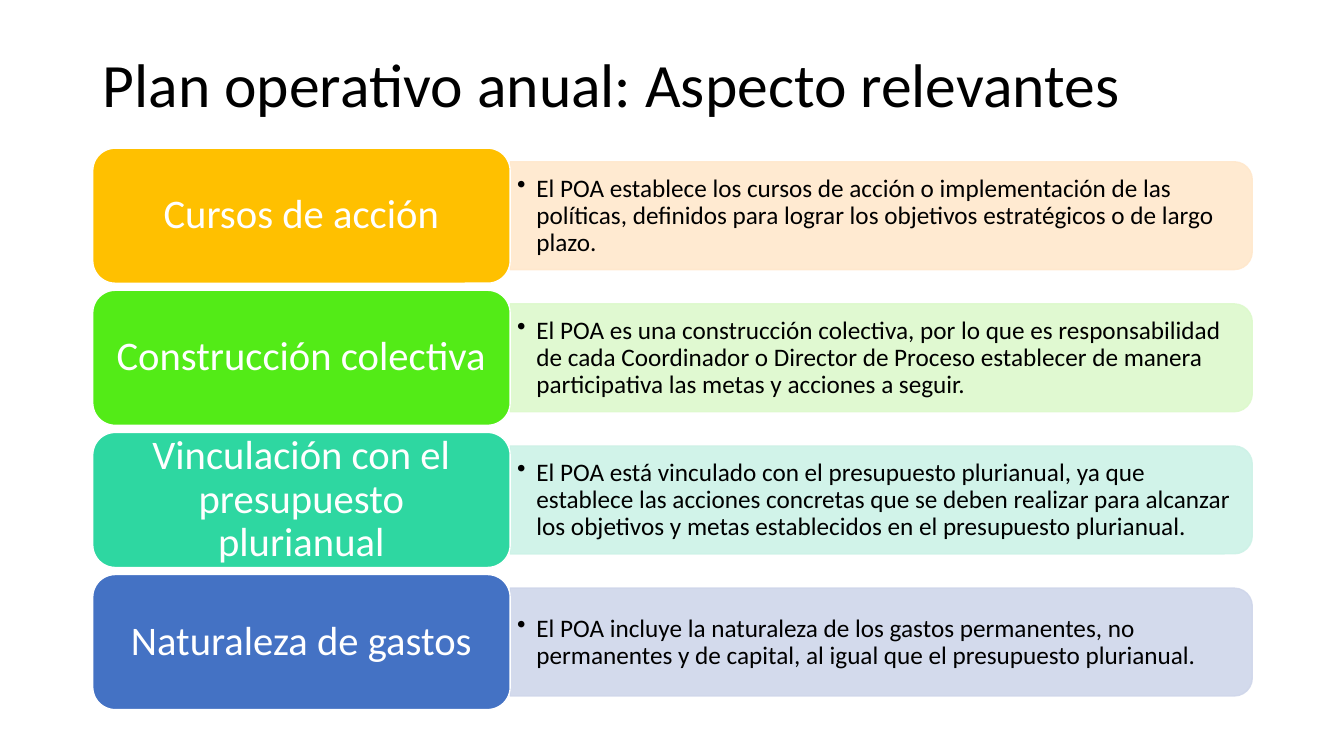
"""Build the slide on the relevant aspects of the annual operating plan."""
import lxml.etree
import pptx
import pptx.dml.color
import pptx.enum.shapes
import pptx.enum.text
import pptx.oxml.ns
import pptx.util

Inches = pptx.util.Inches
SHAPES = pptx.enum.shapes.MSO_SHAPE
ALIGN = pptx.enum.text.PP_ALIGN
qn = pptx.oxml.ns.qn


def color(hex_value):
    return pptx.dml.color.RGBColor.from_string(hex_value)


def write(shape, text, size, hex_value, alignment, margins, bullet=False):
    frame = shape.text_frame
    frame.text = text
    frame_format = {
        "word_wrap": True,
        "auto_size": pptx.enum.text.MSO_AUTO_SIZE.NONE,
        "vertical_anchor": pptx.enum.text.MSO_ANCHOR.MIDDLE,
        "margin_left": Inches(margins[0]),
        "margin_right": Inches(margins[0]),
        "margin_top": Inches(margins[1]),
        "margin_bottom": Inches(margins[1]),
    }
    for name, value in frame_format.items():
        setattr(frame, name, value)
    paragraph = frame.paragraphs[0]
    paragraph.alignment = alignment
    paragraph.line_spacing = 0.9
    if bullet:
        properties = paragraph._p.get_or_add_pPr()
        properties.set("marL", str(Inches(0.19)))
        properties.set("indent", str(Inches(-0.19)))
        lxml.etree.SubElement(properties, qn("a:buChar")).set("char", "•")
    font_format = {"name": "Calibri", "size": pptx.util.Pt(size)}
    for name, value in font_format.items():
        setattr(paragraph.font, name, value)
    paragraph.font.color.rgb = color(hex_value)


presentation = pptx.Presentation()
presentation.slide_width = Inches(13.33)
presentation.slide_height = Inches(7.5)
slide = presentation.slides.add_slide(presentation.slide_layouts[5])

title = slide.shapes.title
title_place = {"left": 0.92, "top": 0.4, "width": 11.5, "height": 0.94}
for name, value in title_place.items():
    setattr(title, name, Inches(value))
write(title, "Plan operativo anual: Aspecto relevantes", 44, "000000",
      ALIGN.LEFT, (0.1, 0.05))

aspects = [
    ("Cursos de acción", "FFC000", "FFE8CC",
     "El POA establece los cursos de acción o implementación de las políticas, "
     "definidos para lograr los objetivos estratégicos o de largo plazo."),
    ("Construcción colectiva", "53EB17", "DDF9CC",
     "El POA es una construcción colectiva, por lo que es responsabilidad de "
     "cada Coordinador o Director de Proceso establecer de manera participativa "
     "las metas y acciones a seguir."),
    ("Vinculación con el presupuesto plurianual", "2ED7A1", "CDF2E7",
     "El POA está vinculado con el presupuesto plurianual, ya que establece las "
     "acciones concretas que se deben realizar para alcanzar los objetivos y "
     "metas establecidos en el presupuesto plurianual."),
    ("Naturaleza de gastos", "4472C4", "CFD6EA",
     "El POA incluye la naturaleza de los gastos permanentes, no permanentes y "
     "de capital, al igual que el presupuesto plurianual."),
]
label_left, label_width, label_height = 0.92, 4.14, 1.34
panel_left, panel_width, panel_height = label_left + label_width, 7.36, 1.07
row_pitch = 1.41

for row, (heading, label_color, panel_color, description) in enumerate(aspects):
    top = 1.47 + row * row_pitch
    middle = top + label_height / 2

    panel = slide.shapes.add_shape(
        SHAPES.ROUND_2_SAME_RECTANGLE,
        Inches(panel_left + (panel_width - panel_height) / 2),
        Inches(middle - panel_width / 2),
        Inches(panel_height), Inches(panel_width))
    panel.rotation = 90
    label = slide.shapes.add_shape(
        SHAPES.ROUNDED_RECTANGLE, Inches(label_left), Inches(top),
        Inches(label_width), Inches(label_height))
    for shape, fill, line in ((panel, panel_color, panel_color),
                              (label, label_color, "FFFFFF")):
        shape.shadow.inherit = False
        shape.fill.solid()
        shape.fill.fore_color.rgb = color(fill)
        shape.line.color.rgb = color(line)
        shape.line.width = pptx.util.Pt(1)
    for tint in panel.element.spPr.iter(qn("a:srgbClr")):
        lxml.etree.SubElement(tint, qn("a:alpha")).set("val", "90000")

    write(label, heading, 29, "FFFFFF", ALIGN.CENTER, (0.12, 0.06))
    details = slide.shapes.add_textbox(
        Inches(panel_left), Inches(top + 0.19), Inches(7.31), Inches(0.97))
    write(details, description, 18, "000000", ALIGN.LEFT, (0.07, 0.04), bullet=True)

presentation.save("out.pptx")
